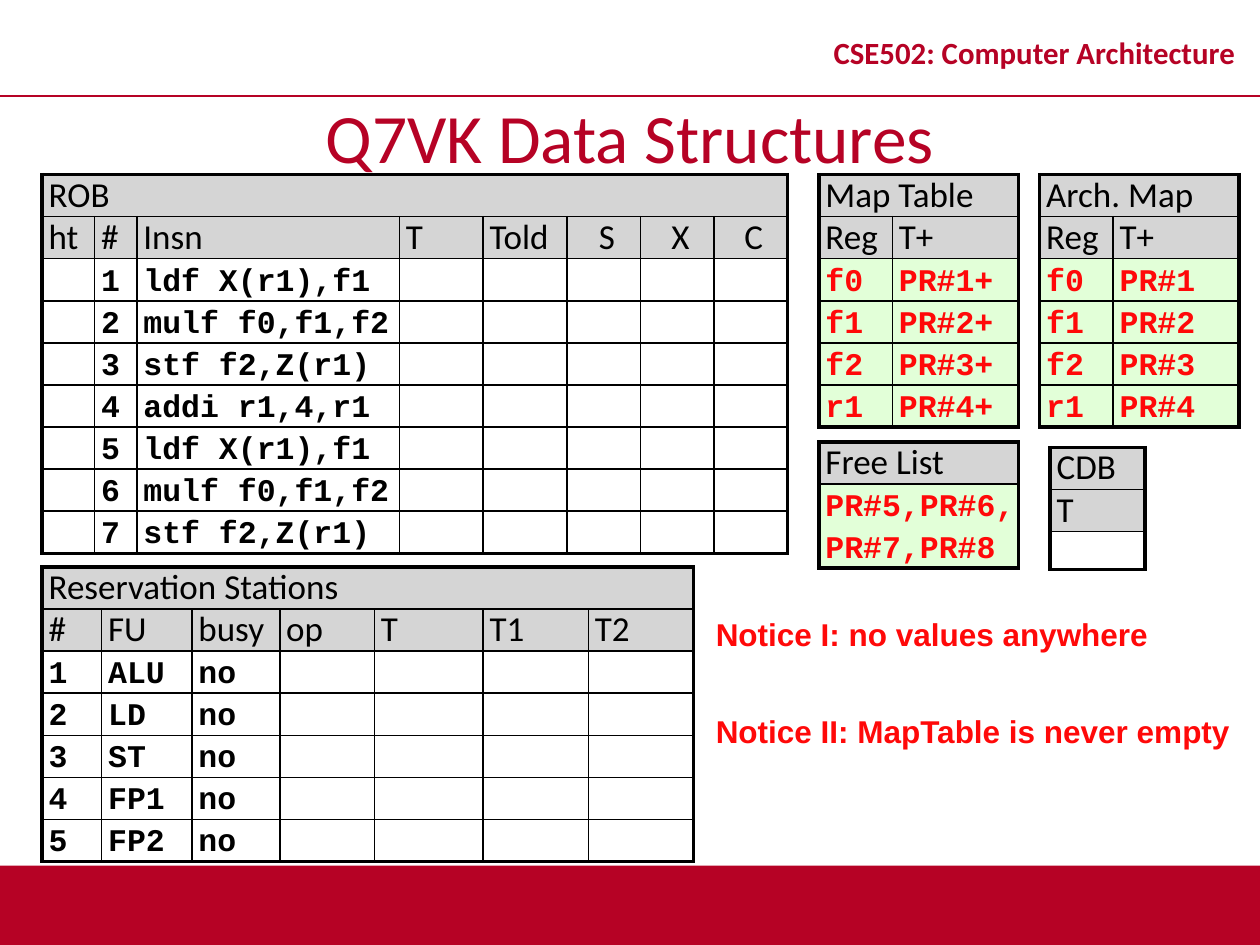
from dataclasses import dataclass

from lxml.etree import SubElement
from pptx import Presentation
from pptx.dml.color import RGBColor
from pptx.enum.shapes import MSO_CONNECTOR as Connector, MSO_SHAPE as Shape
from pptx.enum.text import MSO_ANCHOR as Anchor, MSO_AUTO_SIZE as AutoSize, PP_ALIGN as Align
from pptx.oxml.ns import qn
from pptx.util import Cm, Pt

COLOURS = {
    "crimson": "B60225",
    "red": "FF0909",
    "black": "000000",
    "white": "FFFFFF",
    "grey": "D5D5D5",
    "mint": "E2FFD8",
}
SLIDE_WIDTH, SLIDE_HEIGHT = 25.4, 19.05
RULE_TOP = 1.93
LINE_HEIGHT = 2.54 / 3
TABLE_TOP = 3.52
LEFT, MIDDLE = 0.85, 16.51
OUTER, INNER = 2.25, 1


@dataclass
class TextStyle:
    font: str
    size: float
    colour: str
    bold: bool = False


@dataclass
class Grid:
    left: float
    top: float
    columns: list[float]
    title: str
    heads: list[str]
    body: list[list[str]]
    fill: str = "white"
    body_lines: float = 1


@dataclass
class Label:
    left: float
    top: float
    width: float
    height: float
    text: str
    style: TextStyle
    align: Align = Align.LEFT
    anchor: Anchor = Anchor.TOP
    wrap: bool = True
    spacing: float = 1


HEADING = TextStyle("Calibri", 20, "black")
CODE = TextStyle("Courier New", 18, "black", True)
RED_CODE = TextStyle("Courier New", 18, "red", True)
NOTICE = TextStyle("Arial", 18, "red", True)
COURSE = TextStyle("Calibri", 17.6, "crimson", True)
TITLE = TextStyle("Calibri", 39.6, "crimson")

INSTRUCTIONS = ["ldf X(r1),f1", "mulf f0,f1,f2", "stf f2,Z(r1)", "addi r1,4,r1",
                "ldf X(r1),f1", "mulf f0,f1,f2", "stf f2,Z(r1)"]
UNITS = ["ALU", "LD", "ST", "FP1", "FP2"]
REGISTERS = ["f0", "f1", "f2", "r1"]
CENTRED_HEADS = {"S", "X", "C"}


def register_map(left: float, title: str, suffix: str) -> Grid:
    body = [[name, f"PR#{number}{suffix}"] for number, name in enumerate(REGISTERS, 1)]
    return Grid(left, TABLE_TOP, [1.48, 2.54], title, ["Reg", "T+"], body, "mint")


GRIDS = [
    Grid(LEFT, TABLE_TOP, [1.06, 0.85, 5.29, 1.69, 1.69, 1.48, 1.48, 1.48], "ROB",
         ["ht", "#", "Insn", "T", "Told", "S", "X", "C"],
         [["", str(number), text] + [""] * 5 for number, text in enumerate(INSTRUCTIONS, 1)]),
    register_map(MIDDLE, "Map Table", "+"),
    register_map(20.96, "Arch. Map", ""),
    Grid(LEFT, 11.43, [1.2, 1.82, 1.77, 1.91, 2.19, 2.12, 2.12], "Reservation Stations",
         ["#", "FU", "busy", "op", "T", "T1", "T2"],
         [[str(number), unit, "no"] + [""] * 4 for number, unit in enumerate(UNITS, 1)]),
    Grid(21.17, 9.02, [1.91], "CDB", ["T"], [[""]], body_lines=0.85),
    Grid(MIDDLE, 8.91, [4.02], "Free List", [], [["PR#5,PR#6,PR#7,PR#8"]], "mint", 2),
]

LABELS = [
    Label(16.31, 0.33, 9.09, 1.6, "CSE502: Computer Architecture", COURSE,
          Align.CENTER, Anchor.MIDDLE, spacing=0.8),
    Label(0, RULE_TOP, SLIDE_WIDTH, 1.6, "Q7VK Data Structures", TITLE,
          Align.CENTER, Anchor.MIDDLE),
    Label(14.18, 12.27, 9.22, 1.02, "Notice I: no values anywhere", NOTICE, wrap=False),
    Label(14.18, 14.22, 10.92, 1.02, "Notice II: MapTable is never empty", NOTICE, wrap=False),
]


def rgb(name: str) -> RGBColor:
    return RGBColor.from_string(COLOURS[name])


def add_run(para, text: str, style: TextStyle) -> None:
    span = para.add_run()
    span.text = text
    span.font.name = style.font
    span.font.size = Pt(style.size)
    span.font.bold = style.bold
    span.font.color.rgb = rgb(style.colour)


def add_label(page, label: Label) -> None:
    box = page.shapes.add_textbox(Cm(label.left), Cm(label.top), Cm(label.width), Cm(label.height))
    frame = box.text_frame
    frame.word_wrap = label.wrap
    frame.auto_size = AutoSize.NONE if label.wrap else AutoSize.SHAPE_TO_FIT_TEXT
    frame.vertical_anchor = label.anchor
    para = frame.paragraphs[0]
    para.alignment = label.align
    para.line_spacing = label.spacing
    add_run(para, label.text, label.style)


def set_borders(cell, outer_sides: str) -> None:
    """Draw all four borders, with the heavy line on the sides named by L, R, T, B."""
    properties = cell._tc.get_or_add_tcPr()
    for side in "LRTB":
        width = OUTER if side in outer_sides else INNER
        line = SubElement(properties, qn(f"a:ln{side}"), w=str(int(Pt(width))))
        fill = SubElement(line, qn("a:solidFill"))
        SubElement(fill, qn("a:srgbClr"), val=COLOURS["black"])


def fill_cell(cell, text: str, style: TextStyle, fill: str, outer_sides: str) -> None:
    set_borders(cell, outer_sides)
    cell.fill.solid()
    cell.fill.fore_color.rgb = rgb(fill)
    cell.margin_left = Cm(0.13)
    cell.margin_right = cell.margin_top = cell.margin_bottom = 0
    para = cell.text_frame.paragraphs[0]
    para.line_spacing = Pt(24 if text else 20)
    if text:
        para.alignment = Align.CENTER if text in CENTRED_HEADS else Align.LEFT
        add_run(para, text, style)


def add_grid(page, grid: Grid) -> None:
    column_count = len(grid.columns)
    heading_rows = [[grid.title]] + ([grid.heads] if grid.heads else [])
    rows = heading_rows + grid.body
    heights = [LINE_HEIGHT] * len(heading_rows) + [LINE_HEIGHT * grid.body_lines] * len(grid.body)
    table = page.shapes.add_table(len(rows), column_count, Cm(grid.left), Cm(grid.top),
                                  Cm(sum(grid.columns)), Cm(sum(heights))).table
    table.first_row = table.horz_banding = False
    for column, width in zip(table.columns, grid.columns):
        column.width = Cm(width)
    if column_count > 1:
        table.cell(0, 0).merge(table.cell(0, column_count - 1))
    body_style = RED_CODE if grid.fill == "mint" else CODE
    for row, (texts, height) in enumerate(zip(rows, heights)):
        table.rows[row].height = Cm(height)
        is_heading = row < len(heading_rows)
        for column, text in enumerate(texts):
            outer_sides = "".join(side for side, at_edge in (
                ("L", column == 0), ("R", column == len(texts) - 1),
                ("T", row == 0), ("B", row == len(rows) - 1)) if at_edge)
            fill_cell(table.cell(row, column), text, HEADING if is_heading else body_style,
                      "grey" if is_heading else grid.fill, outer_sides)


def add_frame(page) -> None:
    """Draw the footer band and the rule under the course name."""
    band = page.shapes.add_shape(Shape.RECTANGLE, 0, Cm(17.45), Cm(SLIDE_WIDTH),
                                 Cm(SLIDE_HEIGHT - 17.45))
    band.shadow.inherit = False
    band.fill.solid()
    band.fill.fore_color.rgb = rgb("crimson")
    band.line.fill.background()
    rule = page.shapes.add_connector(Connector.STRAIGHT, 0, Cm(RULE_TOP),
                                     Cm(SLIDE_WIDTH), Cm(RULE_TOP))
    rule.line.color.rgb = rgb("crimson")
    rule.line.width = Pt(1)
    SubElement(rule._element.spPr, qn("a:effectLst"))


def main() -> None:
    deck = Presentation()
    deck.slide_width, deck.slide_height = Cm(SLIDE_WIDTH), Cm(SLIDE_HEIGHT)
    page = deck.slides.add_slide(deck.slide_layouts[6])
    add_frame(page)
    for label in LABELS:
        add_label(page, label)
    for grid in GRIDS:
        add_grid(page, grid)
    deck.save("out.pptx")


if __name__ == "__main__":
    main()
